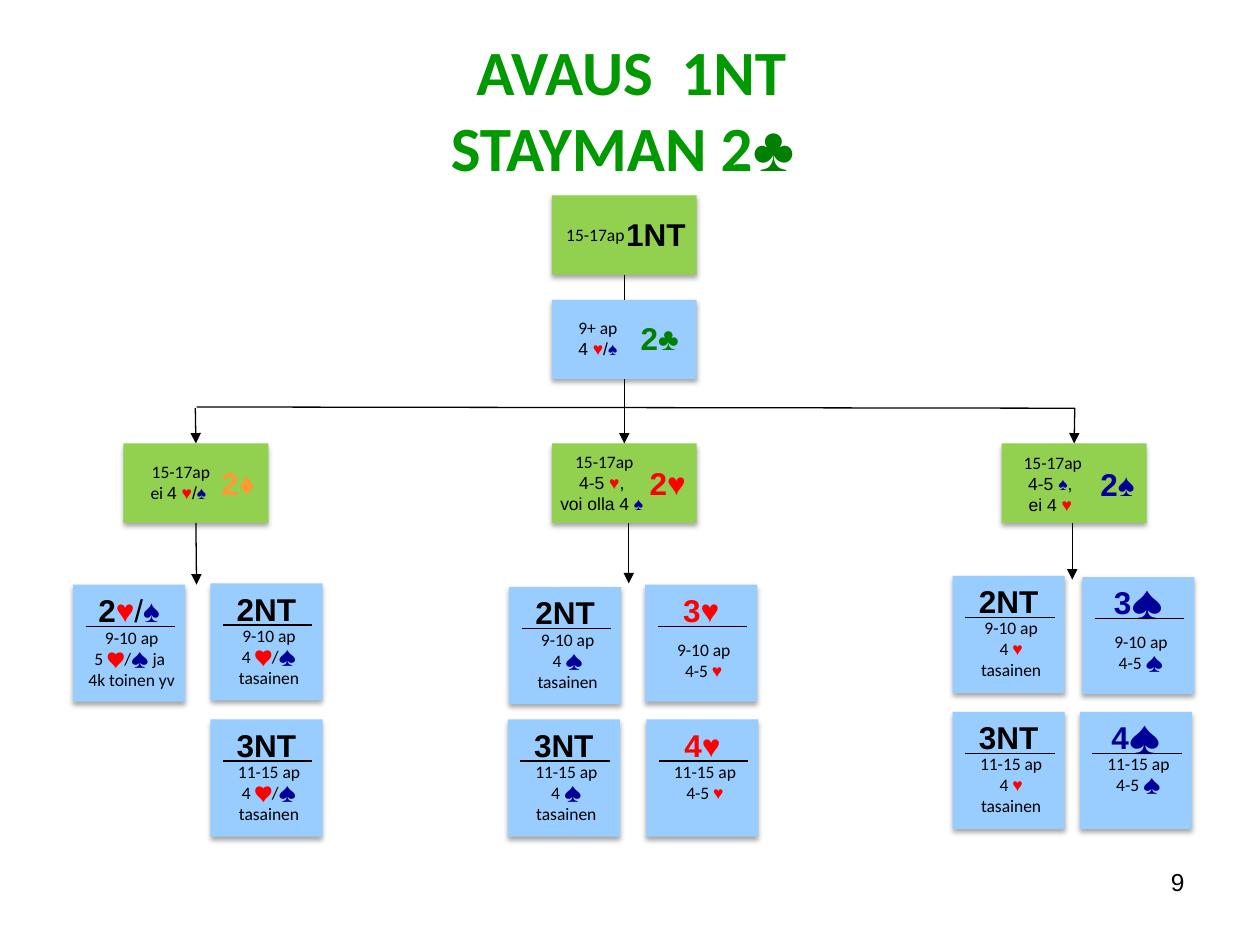
from itertools import groupby

from lxml import etree
from pptx import Presentation
from pptx.dml.color import RGBColor
from pptx.enum.shapes import MSO_CONNECTOR, MSO_SHAPE
from pptx.enum.text import MSO_ANCHOR, PP_ALIGN
from pptx.oxml.ns import qn
from pptx.util import Inches, Pt

RECTANGLE = MSO_SHAPE.RECTANGLE
STRAIGHT = MSO_CONNECTOR.STRAIGHT
TOP = MSO_ANCHOR.TOP
LEFT, CENTER, RIGHT = PP_ALIGN.LEFT, PP_ALIGN.CENTER, PP_ALIGN.RIGHT

THEME = {
    "opener": "92D050", "responder": "99CCFF", "title": "009900", "black": "000000",
    "♥": "FF0000", "♠": "000099", "♣": "008000", "♦": "FF9933",
    "title_size": 36, "bid_size": 18, "note_size": 10, "number_size": 14,
}
BODY = ("Calibri", False)
PLAIN = ("Arial", False)
BOLD = ("Arial", True)
TITLE = ("Calibri", True)
SUITS = "♥♠♣♦"


def write(shape, segments, size, base="black", align=CENTER):
    text_frame = shape.text_frame
    text_frame.word_wrap = True
    text_frame.vertical_anchor = TOP
    paragraph = text_frame.paragraphs[0]
    paragraph.alignment = align
    for text, (font_name, bold) in segments:
        for key, characters in groupby(text, lambda c: c if c in SUITS + "\n" else base):
            if key == "\n":
                paragraph.add_line_break()
                etree.SubElement(paragraph._p[-1], qn("a:rPr"), sz=str(THEME[size] * 100))
                continue
            run = paragraph.add_run()
            run.text = "".join(characters)
            run.font.name = font_name
            run.font.size = Pt(THEME[size])
            run.font.bold = bold
            run.font.color.rgb = RGBColor.from_string(THEME[key])


def add_line(shapes, x1, y1, x2, y2, arrow=False):
    connector = shapes.add_connector(STRAIGHT, Inches(x1), Inches(y1), Inches(x2), Inches(y2))
    connector.line.color.rgb = RGBColor.from_string(THEME["black"])
    connector.line.width = Pt(0.75)
    if arrow:
        etree.SubElement(connector.line._get_or_add_ln(), qn("a:tailEnd"), type="triangle")
    etree.SubElement(connector._element.spPr, qn("a:effectLst"))
    return connector


presentation = Presentation()
presentation.slide_width = Inches(10)
presentation.slide_height = Inches(7.5)
slide = presentation.slides.add_slide(presentation.slide_layouts[5])

title = slide.shapes.title
title.left, title.top, title.width, title.height = map(Inches, (0.12, 0.21, 9.78, 1.31))
write(title, [("AVAUS  1NT\nSTAYMAN 2", TITLE), ("♣ ", BOLD)], "title_size", "title")

BID_WIDTH, BID_HEIGHT = 1.15, 0.63
REPLY_WIDTH, REPLY_HEIGHT = 0.89, 0.93
SIDE_NOTE = 0.91

bids = [
    ("1NT", 4.38, 1.55, "opener", [("15-17ap", BODY)], (-0.07, 0.18, 0.83),
     "1NT", "black", (0.49, 0.11, 0.71), LEFT),
    ("2♣", 4.38, 2.38, "responder", [("9+ ap\n", BODY), ("4 ♥/♠", PLAIN)], (-0.05, 0.09, 0.83),
     "2♣", "♣", (0.5, 0.1, 0.71), CENTER),
    ("2♥", 4.38, 3.52, "opener", [("15-17ap\n", BODY), ("4-5 ♥, \nvoi olla 4 ♠ ", PLAIN)],
     (-0.04, 0.01, SIDE_NOTE), "2♥", "♥", (0.65, 0.11, 0.54), CENTER),
    ("2♠", 7.95, 3.52, "opener", [("15-17ap\n", BODY), ("4-5 ♠, \nei 4 ♥ ", PLAIN)],
     (-0.05, 0.02, SIDE_NOTE), "2♠", "♠", (0.65, 0.12, 0.54), CENTER),
    ("2♦", 0.98, 3.52, "opener", [("15-17ap\nei ", BODY), ("4 ♥/♠ ", PLAIN)],
     (0, 0.09, SIDE_NOTE), "2♦", "♦", (0.64, 0.11, 0.54), CENTER),
]

cards = []
for name, x, y, fill, note, note_place, bid, color, bid_place, align in bids:
    cards.append((name, x, y, BID_WIDTH, BID_HEIGHT, fill, note, note_place,
                  [(bid, BOLD)], color, bid_place, align))

BOTH = [("4 ♥/♠\ntasainen", BODY)]
SPADES = [("4 ♠\ntasainen", BODY)]
HEARTS = [("4 ", BODY), ("♥", BOLD), ("\ntasainen", BODY)]
HEART_FIT = [("4-5 ", BODY), ("♥", BOLD)]
SPADE_FIT = [("4-5 ♠", BODY)]
INVITE, GAME = "9-10 ap\n", "11-15 ap\n"

replies = [
    (0.58, 4.64, [("2", BOLD), ("♥/♠", PLAIN)], "black", INVITE,
     [("5 ♥/♠ ja \n4k toinen yv", BODY)], 0.29),
    (1.67, 4.63, [("2NT", BOLD)], "black", INVITE, BOTH, 0.28),
    (1.67, 5.71, [("3NT", BOLD)], "black", GAME, BOTH, 0.28),
    (4.04, 4.66, [("2NT", BOLD)], "black", INVITE, SPADES, 0.28),
    (4.03, 5.71, [("3NT", BOLD)], "black", GAME, SPADES, 0.28),
    (5.12, 4.64, [("3♥", BOLD)], "♥", INVITE, HEART_FIT, 0.38),
    (5.13, 5.71, [("4♥", BOLD)], "♥", GAME, HEART_FIT, 0.28),
    (7.56, 4.57, [("2NT", BOLD)], "black", INVITE, HEARTS, 0.28),
    (7.56, 5.65, [("3NT", BOLD)], "black", GAME, HEARTS, 0.28),
    (8.59, 4.58, [("3", BOLD), ("♠", BODY)], "♠", INVITE, SPADE_FIT, 0.38),
    (8.57, 5.65, [("4", BOLD), ("♠", BODY)], "♠", GAME, SPADE_FIT, 0.28),
]
for x, y, bid, color, points, holding, note_y in replies:
    cards.append((None, x, y, REPLY_WIDTH, REPLY_HEIGHT, "responder",
                  [(points, BODY)] + holding, (0, note_y, 0.93),
                  bid, color, (-0.02, 0, 0.93), CENTER))

boxes = {}
for name, x, y, width, height, fill, note, note_place, bid, color, bid_place, align in cards:
    shapes = slide.shapes.add_group_shape().shapes
    box = shapes.add_shape(RECTANGLE, Inches(x), Inches(y), Inches(width), Inches(height))
    box.fill.solid()
    box.fill.fore_color.rgb = RGBColor.from_string(THEME[fill])
    box.line.fill.background()
    box.shadow.inherit = False
    shadow = etree.SubElement(box._element.spPr.find(qn("a:effectLst")), qn("a:outerShdw"),
                              blurRad=str(Pt(3.1)), dist=str(Pt(1.8)), dir="5400000", rotWithShape="0")
    shadow_color = etree.SubElement(shadow, qn("a:srgbClr"), val=THEME["black"])
    etree.SubElement(shadow_color, qn("a:alpha"), val="35000")

    line_count = 1 + sum(text.count("\n") for text, style in note)
    note_height = 0.1 + 0.17 * line_count
    for segments, place, box_height, size, base, alignment in (
        (note, note_place, note_height, "note_size", "black", CENTER),
        (bid, bid_place, 0.4, "bid_size", color, align),
    ):
        dx, dy, text_width = place
        text_box = shapes.add_textbox(Inches(x + dx), Inches(y + dy),
                                      Inches(text_width), Inches(box_height))
        write(text_box, segments, size, base, alignment)
    if name:
        boxes[name] = box
    else:
        add_line(shapes, x + 0.1, y + 0.33, x + 0.81, y + 0.33)

connections = [
    (4.96, 2.18, 4.96, 2.38, False, "1NT", "2♣"),
    (1.56, 3.23, 8.53, 3.24, False, None, None),
    (1.55, 3.24, 1.55, 3.52, True, None, "2♦"),
    (8.53, 3.24, 8.53, 3.52, True, None, "2♠"),
    (4.96, 3.01, 4.96, 3.52, True, "2♣", "2♥"),
    (1.55, 4.15, 1.56, 4.64, True, "2♦", None),
    (4.99, 4.15, 4.99, 4.63, True, None, None),
    (8.51, 4.15, 8.51, 4.6, True, None, None),
]
for x1, y1, x2, y2, arrow, start, end in connections:
    connector = add_line(slide.shapes, x1, y1, x2, y2, arrow)
    if start:
        connector.begin_connect(boxes[start], 2)
    if end:
        connector.end_connect(boxes[end], 0)

number = slide.shapes.add_textbox(Inches(7.17), Inches(6.83), Inches(2.33), Inches(0.52))
write(number, [("9", PLAIN)], "number_size", align=RIGHT)

presentation.save("out.pptx")
